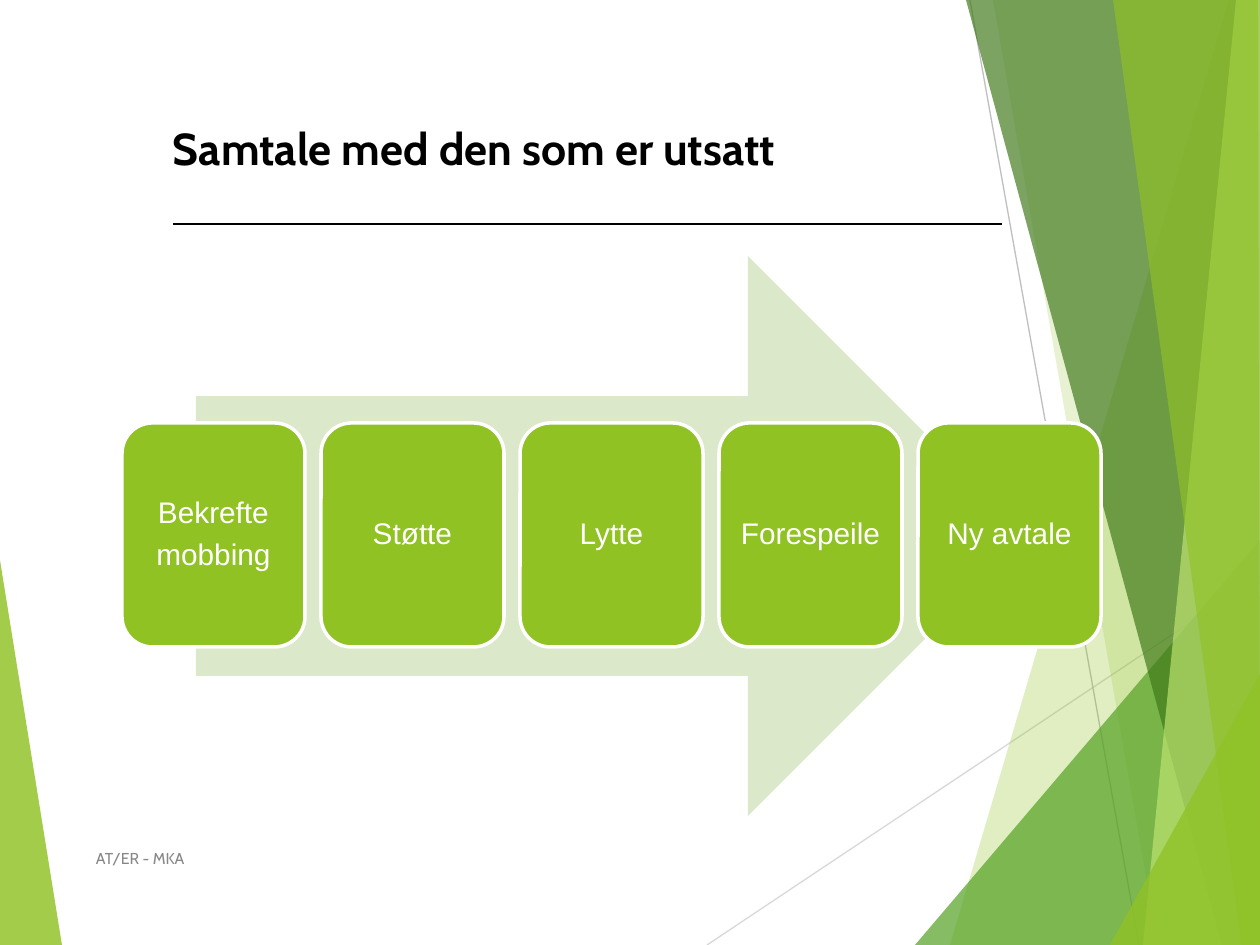
import pptx
import pptx.dml.color
import pptx.enum.shapes
import pptx.enum.text
import pptx.oxml.ns
import pptx.util
from lxml import etree

PX_PER_INCH = 126
WIDTH, HEIGHT = 1260, 945

COLORS = {
    "lime": "90C226",
    "step": "90C223",
    "arrow": "DBE8CA",
    "green": "54A021",
    "dark": "3F7818",
    "pale": "BFE471",
    "white": "FFFFFF",
    "black": "000000",
    "footer": "888888",
    "light_gray": "D8D8D8",
    "gray": "BFBFBF",
}

FACETS = [
    ("lime", 83, [(0, 560), (62, HEIGHT), (0, HEIGHT)]),
    ("lime", 28, [(1229, 0), (950, HEIGHT), (WIDTH, HEIGHT), (WIDTH, 0)]),
    ("lime", 20, [(993, 0), (1158, HEIGHT), (WIDTH, HEIGHT), (WIDTH, 0)]),
    ("green", 70, [(915, HEIGHT), (WIDTH, 540), (WIDTH, HEIGHT)]),
    ("dark", 68, [(966, 0), (1222, HEIGHT), (WIDTH, HEIGHT), (WIDTH, 0)]),
    ("pale", 68, [(1236, 0), (1143, HEIGHT), (WIDTH, HEIGHT), (WIDTH, 0)]),
    ("lime", 63, [(1113, 0), (1242, HEIGHT), (WIDTH, HEIGHT), (1258, 0)]),
    ("lime", 80, [(1110, HEIGHT), (WIDTH, 674), (WIDTH, HEIGHT)]),
]

STEPS = [["Bekrefte", "mobbing"], ["Støtte"], ["Lytte"], ["Forespeile"], ["Ny avtale"]]
STEP_LEFT, STEP_TOP, STEP_WIDTH, STEP_HEIGHT, STEP_PITCH = 122, 423, 183, 224, 199


def px(value):
    return round(value * pptx.util.Inches(1) / PX_PER_INCH)


def color(name):
    return pptx.dml.color.RGBColor.from_string(COLORS[name])


def fill_shape(shape, name):
    shape.shadow.inherit = False
    shape.fill.solid()
    shape.fill.fore_color.rgb = color(name)
    shape.line.fill.background()


def add_facet(slide, name, opacity, points):
    corners = [(px(x), px(y)) for x, y in points]
    builder = slide.shapes.build_freeform(*corners[0])
    builder.add_line_segments(corners[1:], close=True)
    facet = builder.convert_to_shape()
    fill_shape(facet, name)
    tone = facet.fill._xPr.find(".//" + pptx.oxml.ns.qn("a:srgbClr"))
    etree.SubElement(tone, pptx.oxml.ns.qn("a:alpha"), val=str(opacity * 1000))


def add_line(slide, start, end, name, width):
    line = slide.shapes.add_connector(
        pptx.enum.shapes.MSO_CONNECTOR.STRAIGHT, *map(px, start + end))
    line.line.color.rgb = color(name)
    line.line.width = pptx.util.Pt(width)
    etree.SubElement(line._element.spPr, pptx.oxml.ns.qn("a:effectLst"))


def set_margins(frame, margin):
    frame.margin_left = frame.margin_right = px(margin)
    frame.margin_top = frame.margin_bottom = px(margin)
    frame.word_wrap = True


def set_font(paragraph, name, size, tone, bold=False):
    paragraph.font.name = name
    paragraph.font.size = pptx.util.Pt(size)
    paragraph.font.bold = bold
    paragraph.font.color.rgb = color(tone)


def add_label(slide, box, text, size, tone, margin, anchor, bold=False):
    frame = slide.shapes.add_textbox(*map(px, box)).text_frame
    set_margins(frame, margin)
    frame.vertical_anchor = anchor
    frame.text = text
    set_font(frame.paragraphs[0], "Cabin", size, tone, bold)


def add_arrow(slide, box):
    arrow = slide.shapes.add_shape(
        pptx.enum.shapes.MSO_SHAPE.RIGHT_ARROW, *map(px, box))
    fill_shape(arrow, "arrow")


def add_step(slide, left, lines):
    step = slide.shapes.add_shape(
        pptx.enum.shapes.MSO_SHAPE.ROUNDED_RECTANGLE,
        px(left), px(STEP_TOP), px(STEP_WIDTH), px(STEP_HEIGHT))
    fill_shape(step, "step")
    step.line.color.rgb = color("white")
    step.line.width = pptx.util.Pt(2)
    frame = step.text_frame
    set_margins(frame, 9)
    frame.vertical_anchor = pptx.enum.text.MSO_ANCHOR.MIDDLE
    frame.text = "\n".join(lines)
    for index, paragraph in enumerate(frame.paragraphs):
        paragraph.alignment = pptx.enum.text.PP_ALIGN.CENTER
        paragraph.line_spacing = 0.9
        paragraph.space_before = pptx.util.Pt(6 if index else 0)
        set_font(paragraph, "Arial", 17, "white")


def main():
    presentation = pptx.Presentation()
    presentation.slide_width = px(WIDTH)
    presentation.slide_height = px(HEIGHT)
    slide = presentation.slides.add_slide(presentation.slide_layouts[6])

    add_facet(slide, *FACETS[0])
    add_line(slide, (707, HEIGHT), (WIDTH, 576), "light_gray", 0.75)
    add_line(slide, (970, 0), (1139, HEIGHT), "gray", 0.75)
    for facet in FACETS[1:]:
        add_facet(slide, *facet)

    add_line(slide, (173, 224), (1002, 224), "black", 1.5)
    add_label(slide, (173, 121, 829, 83), "Samtale med den som er utsatt",
              25.5, "black", 0, pptx.enum.text.MSO_ANCHOR.TOP, bold=True)
    add_arrow(slide, (196, 256, 832, 560))
    for index, lines in enumerate(STEPS):
        add_step(slide, STEP_LEFT + index * STEP_PITCH, lines)
    add_label(slide, (84, 833, 638, 50), "AT/ER - MKA",
              9, "footer", 12, pptx.enum.text.MSO_ANCHOR.MIDDLE)

    presentation.save("out.pptx")


if __name__ == "__main__":
    main()
